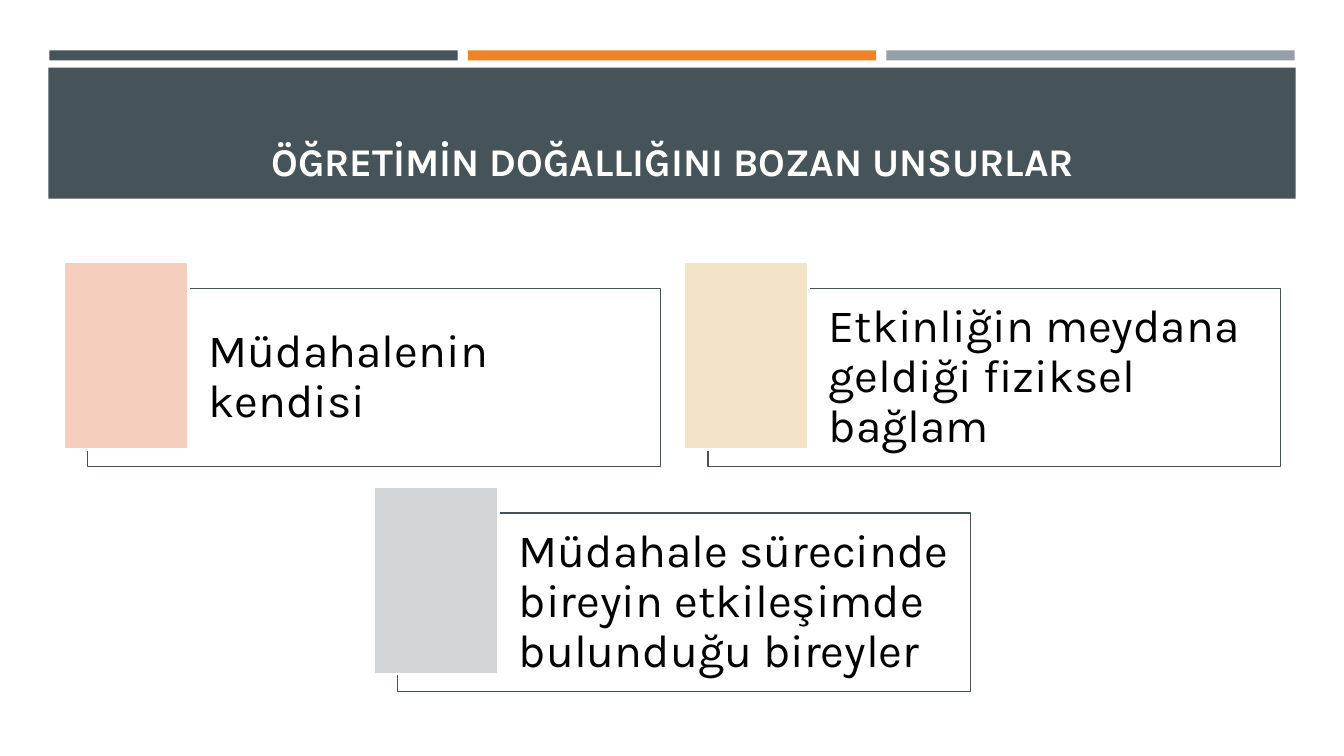
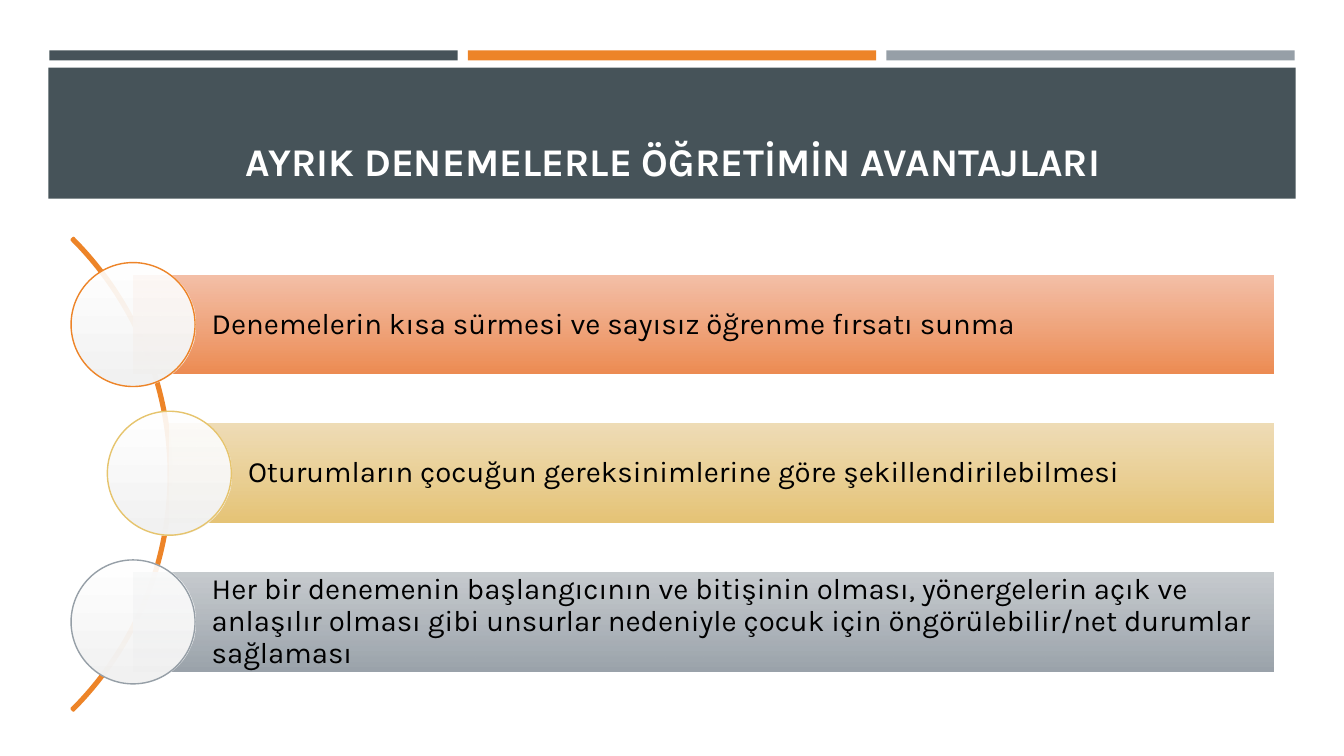
from dataclasses import dataclass

from lxml.etree import SubElement
from pptx import Presentation
from pptx.dml.color import RGBColor
from pptx.enum.shapes import MSO_SHAPE
from pptx.enum.text import MSO_ANCHOR, MSO_AUTO_SIZE, PP_ALIGN
from pptx.oxml.ns import qn
from pptx.util import Inches, Pt

# Content
OBSTACLES_TITLE = "ÖĞRETİMİN DOĞALLIĞINI BOZAN UNSURLAR"
OBSTACLES = [  # text, accent colour
    ("Müdahalenin kendisi", "F6CEBE"),
    ("Etkinliğin meydana geldiği fiziksel bağlam", "F3E4C8"),
    ("Müdahale sürecinde bireyin etkileşimde bulunduğu bireyler", "D3D6D9"),
]
BENEFITS_TITLE = "AYRIK DENEMELERLE ÖĞRETİMİN AVANTAJLARI"
BENEFITS = [  # text, bar left edge, bar gradient, circle outline
    ("Denemelerin kısa sürmesi ve sayısız öğrenme fırsatı sunma",
     1.32, ("F3B89D", "ED8C53"), "ED8428"),
    ("Oturumların çocuğun gereksinimlerine göre şekillendirilebilmesi",
     1.68, ("EED9AE", "E6C476"), "E6C46D"),
    ("Her bir denemenin başlangıcının ve bitişinin olması, yönergelerin açık ve "
     "anlaşılır olması gibi unsurlar nedeniyle çocuk için öngörülebilir/net "
     "durumlar sağlaması",
     1.32, ("C0C5C9", "9BA3AB"), "969FA7"),
]


@dataclass(frozen=True)
class Theme:
    font: str = "Karla"
    dark: str = "465359"
    orange: str = "ED8428"
    grey: str = "969FA7"
    white: str = "FFFFFF"
    pale: str = "F2F2F2"
    text: str = "000000"
    title_size: int = 28
    card_size: int = 33
    bar_size: int = 21
    thin: float = 1
    thick: float = 1.75


T = Theme()


def rgb(value):
    return RGBColor.from_string(value)


def set_gradient(s, colors):
    """Fill from top to bottom, the top colour slightly transparent."""
    s.fill.gradient()
    s.fill.gradient_angle = 270
    for stop, color in zip(s.fill.gradient_stops, colors):
        stop.color.rgb = rgb(color)
    top = s._element.spPr.find(".//" + qn("a:srgbClr"))
    SubElement(top, qn("a:alpha"), val="90000")


def add_shape(slide, kind, box, fill=None, line=None, width=T.thin):
    s = slide.shapes.add_shape(kind, *(Inches(v) for v in box))
    s.shadow.inherit = False
    if isinstance(fill, tuple):
        set_gradient(s, fill)
    elif fill:
        s.fill.solid()
        s.fill.fore_color.rgb = rgb(fill)
    else:
        s.fill.background()
    if line:
        s.line.color.rgb = rgb(line)
        s.line.width = Pt(width)
    else:
        s.line.fill.background()
    return s


def set_text(s, text, size, color, align=PP_ALIGN.LEFT, bold=False):
    tf = s.text_frame
    tf.text = text
    tf.word_wrap = True
    p = tf.paragraphs[0]
    p.alignment = align
    p.line_spacing = 0.9
    font = p.runs[0].font
    font.name, font.size, font.bold = T.font, Pt(size), bold
    font.color.rgb = rgb(color)
    return tf


def set_label(s, text, size, left, margin):
    tf = set_text(s, text, size, T.text)
    tf.vertical_anchor = MSO_ANCHOR.MIDDLE
    tf.margin_left = Inches(left)
    tf.margin_right = tf.margin_top = tf.margin_bottom = Inches(margin)


def add_bands(slide, layout):
    """Draw the shared bands and move them into the layout."""
    bands = [((0.49 + 4.15 * i, 0.5, 4.05, 0.1), color)
             for i, color in enumerate((T.dark, T.orange, T.grey))]
    bands.append(((0.48, 0.67, 12.37, 1.3), T.dark))
    for box, color in bands:
        s = add_shape(slide, MSO_SHAPE.RECTANGLE, box, color)
        layout.shapes._spTree.insert(2, s._element)


def add_title(slide, text):
    s = slide.shapes.title
    s.left, s.top, s.width, s.height = (
        Inches(v) for v in (0.64, 0.77, 12.06, 1.11))
    tf = set_text(s, text, T.title_size, T.white, PP_ALIGN.CENTER, True)
    tf.paragraphs[0].line_spacing = 1.0
    tf.auto_size = MSO_AUTO_SIZE.NONE
    tf.vertical_anchor = MSO_ANCHOR.BOTTOM


def add_obstacles(slide):
    left, top, step_x, step_y = 0.87, 2.86, 6.15, 2.23
    for i, (text, accent) in enumerate(OBSTACLES):
        row, col = divmod(i, 2)
        # The single card of the second row is centred
        x = left + step_x * (col + row / 2)
        y = top + step_y * row
        card = add_shape(slide, MSO_SHAPE.RECTANGLE, (x, y, 5.68, 1.77),
                         T.white, T.dark)
        set_label(card, text, T.card_size, 1.2, 0.14)
        add_shape(slide, MSO_SHAPE.RECTANGLE, (x - 0.24, y - 0.26, 1.24, 1.86),
                  accent, T.white, T.thick)


def add_benefits(slide):
    arc = add_shape(slide, MSO_SHAPE.BLOCK_ARC, (-4.93, 1.39, 6.63, 6.63),
                    line=T.orange, width=T.thick)
    for i, value in enumerate((189, 27, 0.004)):
        arc.adjustments[i] = value

    top, step, height, right, circle = 2.73, 1.475, 0.98, 12.63, 1.23
    for i, (text, x, gradient, outline) in enumerate(BENEFITS):
        y = top + step * i
        bar = add_shape(slide, MSO_SHAPE.RECTANGLE,
                        (x, y, right - x, height), gradient)
        set_label(bar, text, T.bar_size, 0.78, 0.06)
        # Circle centred on the bar's left edge
        add_shape(slide, MSO_SHAPE.OVAL,
                  (x - circle / 2, y + (height - circle) / 2, circle, circle),
                  (T.white, T.pale), outline)


def main():
    prs = Presentation()
    prs.slide_width, prs.slide_height = Inches(13.33), Inches(7.5)
    layout = prs.slide_layouts[5]
    pages = [(OBSTACLES_TITLE, add_obstacles), (BENEFITS_TITLE, add_benefits)]
    for i, (title, add_content) in enumerate(pages):
        slide = prs.slides.add_slide(layout)
        if i == 0:
            add_bands(slide, layout)
        add_title(slide, title)
        add_content(slide)
    prs.save("out.pptx")


if __name__ == "__main__":
    main()
